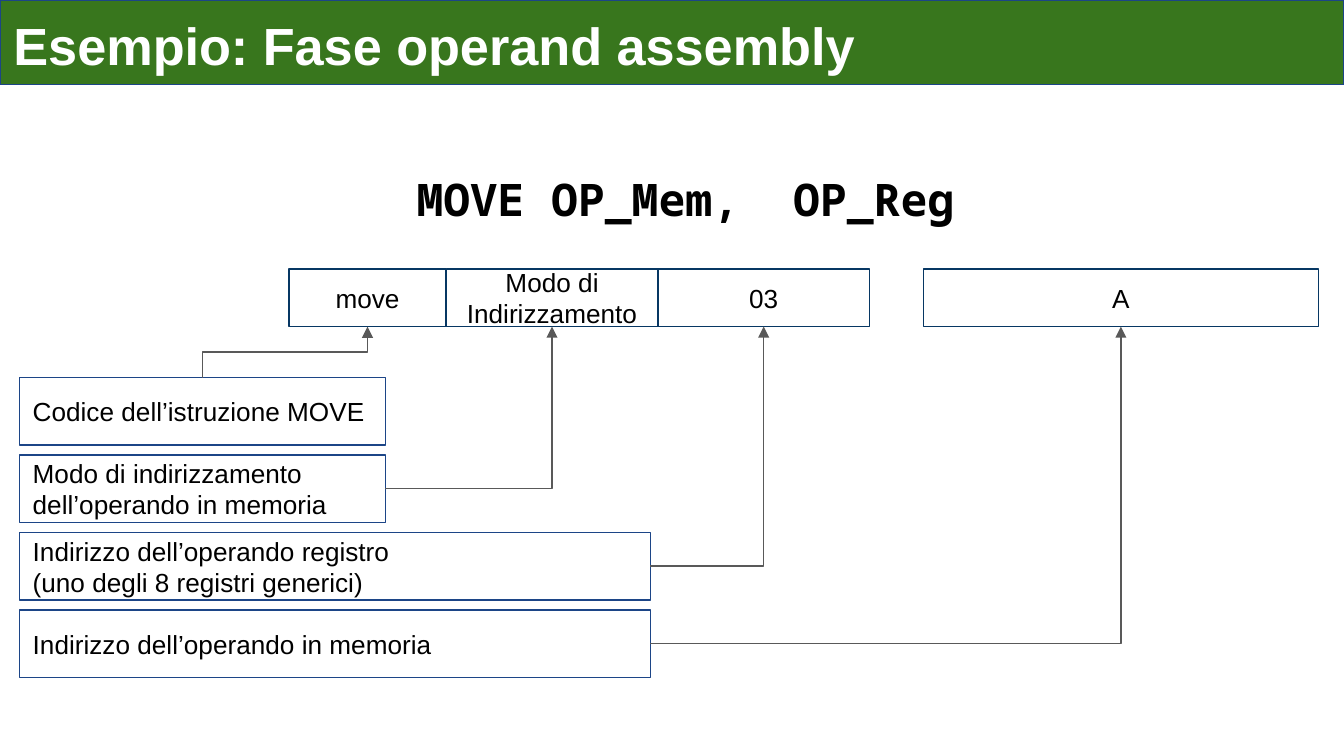
from lxml import etree
from pptx import Presentation
from pptx.dml.color import RGBColor
from pptx.enum.shapes import MSO_CONNECTOR, MSO_SHAPE
from pptx.enum.text import MSO_ANCHOR, MSO_AUTO_SIZE, PP_ALIGN
from pptx.oxml.ns import qn
from pptx.util import Inches, Pt

ELBOW, RECT = MSO_CONNECTOR.ELBOW, MSO_SHAPE.RECTANGLE
TOP, MIDDLE, NO_FIT = MSO_ANCHOR.TOP, MSO_ANCHOR.MIDDLE, MSO_AUTO_SIZE.NONE
LEFT, CENTER = PP_ALIGN.LEFT, PP_ALIGN.CENTER
SITE_TOP, SITE_BOTTOM, SITE_RIGHT = 0, 2, 3

W, H = Inches(10), Inches(5.625)
COL, ROW = W / 100, H / 100
COLORS = {"title": "38761D", "note": "1C4587", "field": "073763",
          "arrow": "595959", "text": "000000", "white": "FFFFFF"}
FIELDS = [("move", 11.7), ("Modo di Indirizzamento", 15.75), ("03", 15.75),
          (None, 4), ("A", 29.4)]
NOTES = [("Codice dell’istruzione MOVE", 0.58),
         ("Modo di indirizzamento dell’operando in memoria", 0.58),
         ("Indirizzo dell’operando registro\n(uno degli 8 registri generici)", 1),
         ("Indirizzo dell’operando in memoria", 1)]
NOTE_GAP = 0.15


def rgb(name):
    """Return the named colour."""
    return RGBColor.from_string(COLORS[name])


def to_emu(box):
    """Turn a box in grid columns and rows into slide lengths."""
    x, y, w, h = box
    return int(x * COL), int(y * ROW), int(w * COL), int(h * ROW)


def set_line(sp, color):
    """Give a shape or connector its thin outline."""
    sp.line.color.rgb = rgb(color)
    sp.line.width = Pt(0.75)


def write(sp, text, size, align=LEFT, anchor=MIDDLE, inset=0.1,
          color="text", font="Arial", bold=False):
    """Put formatted text in a shape."""
    tf = sp.text_frame
    tf.text = text
    tf.word_wrap, tf.auto_size, tf.vertical_anchor = True, NO_FIT, anchor
    tf.margin_left = tf.margin_right = Inches(0.1)
    tf.margin_top = tf.margin_bottom = Inches(inset)
    for p in tf.paragraphs:
        p.alignment = align
        for r in p.runs:
            r.font.name, r.font.size, r.font.bold = font, Pt(size), bold
            r.font.color.rgb = rgb(color)


def add_box(slide, box, text, line, align):
    """Add an outlined rectangle with a label."""
    sp = slide.shapes.add_shape(RECT, *to_emu(box))
    sp.shadow.inherit = False
    sp.fill.background()
    set_line(sp, line)
    write(sp, text, 14, align)
    return sp


def add_title(slide, box, text):
    """Fill the title placeholder as a coloured band."""
    sp = slide.shapes.title
    sp.left, sp.top, sp.width, sp.height = to_emu(box)
    sp.fill.solid()
    sp.fill.fore_color.rgb = rgb("title")
    set_line(sp, "note")
    write(sp, text, 28, anchor=TOP, color="white", bold=True)


def add_code(slide, box, text):
    """Add the instruction in a monospaced font."""
    sp = slide.shapes.add_textbox(*to_emu(box))
    write(sp, text, 24, CENTER, TOP, 0.04, font="Noto Sans Mono", bold=True)


def add_fields(slide, box):
    """Lay the instruction fields along the box and return them."""
    x, y, w, h = box
    unit = w / sum(weight for _, weight in FIELDS)
    fields = []
    for text, weight in FIELDS:
        if text:
            cell = (x, y, weight * unit, h)
            fields.append(add_box(slide, cell, text, "field", CENTER))
        x += weight * unit
    return fields


def add_notes(slide, box):
    """Stack the explanations down the box and return them."""
    x, y, w, h = box
    height = h / (len(NOTES) + NOTE_GAP * (len(NOTES) - 1))
    pitch = height * (1 + NOTE_GAP)
    return [add_box(slide, (x, y + i * pitch, share * w, height), text, "note", LEFT)
            for i, (text, share) in enumerate(NOTES)]


def add_arrow(slide, note, field, site):
    """Join a note to the bottom of its field with an elbow arrow."""
    cxn = slide.shapes.add_connector(ELBOW, 0, 0, 0, 0)
    cxn.begin_connect(note, site)
    cxn.end_connect(field, SITE_BOTTOM)
    set_line(cxn, "arrow")
    pr = cxn._element.spPr
    etree.SubElement(pr.find(qn("a:ln")), qn("a:tailEnd"), type="triangle")
    etree.SubElement(pr, qn("a:effectLst"))
    if site == SITE_RIGHT:
        pr.find(qn("a:prstGeom")).set("prst", "bentConnector2")
        return
    x, y, w, h = cxn.left, cxn.top, cxn.width, cxn.height
    cxn.left, cxn.top = x + (w - h) // 2, y + (h - w) // 2
    cxn.width, cxn.height = h, w
    xfrm = pr.find(qn("a:xfrm"))
    xfrm.attrib.pop("flipV", None)
    xfrm.set("rot", "16200000")


def main():
    """Build and save the slide."""
    prs = Presentation()
    prs.slide_width, prs.slide_height = W, H
    slide = prs.slides.add_slide(prs.slide_layouts[5])
    add_title(slide, (0, 0, 100, 11.2), "Esempio: Fase operand assembly")
    add_code(slide, (24, 22, 54, 7.65), "MOVE OP_Mem,  OP_Reg")
    fields = add_fields(slide, (21.5, 35.56, 76.6, 7.65))
    notes = add_notes(slide, (1.45, 49.96, 46.95, 39.64))
    for i, (note, field) in enumerate(zip(notes, fields)):
        add_arrow(slide, note, field, SITE_RIGHT if i else SITE_TOP)
    prs.save("out.pptx")


if __name__ == "__main__":
    main()
